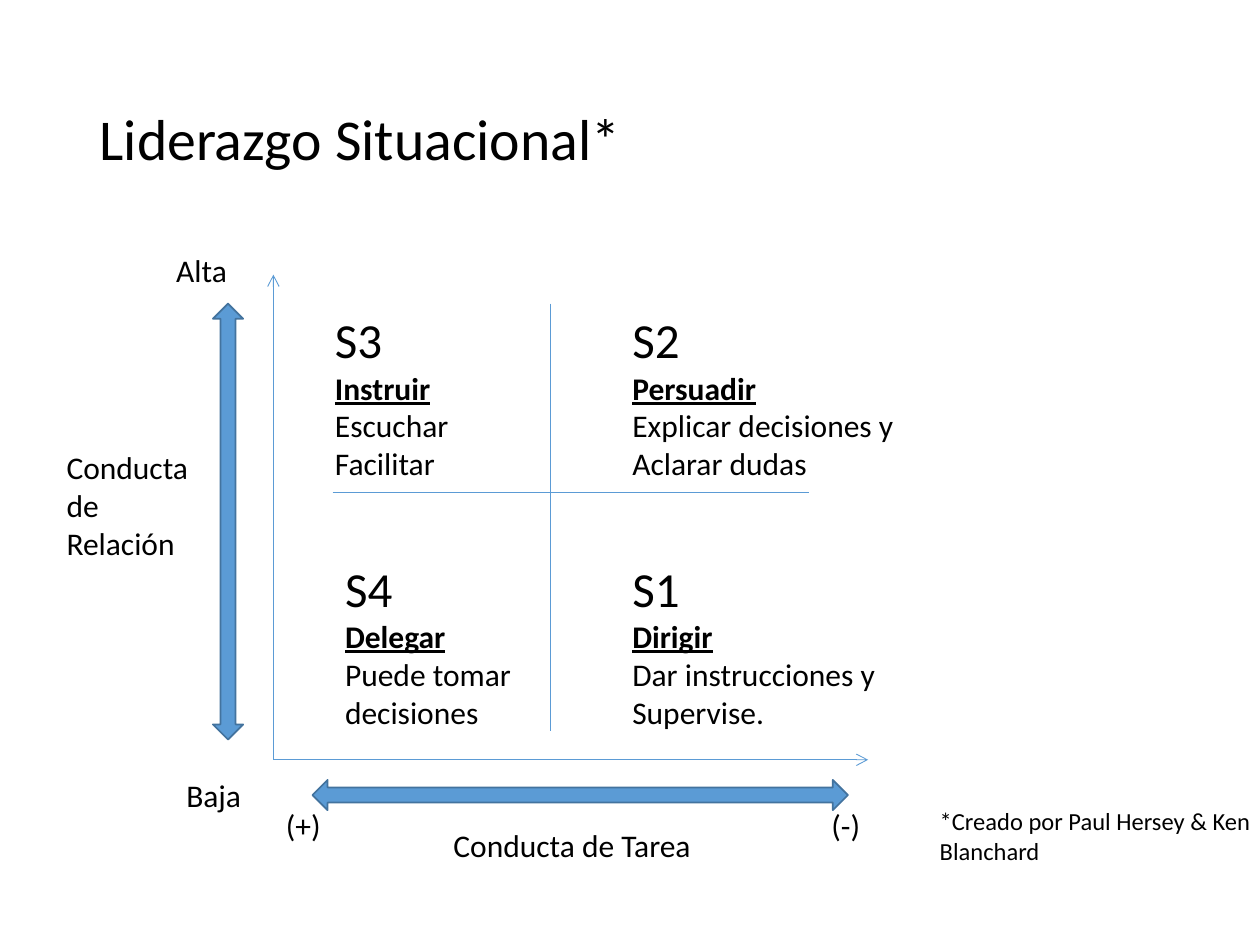
from lxml import etree
from pptx import Presentation
from pptx.dml.color import RGBColor
from pptx.enum import shapes, text
from pptx.oxml.ns import qn
from pptx.util import Inches, Pt

HUES = {"ink": "000000", "blue": "5B9BD5", "edge": "43739E"}
FONT = "Calibri"
TITLE = "Liderazgo Situacional*"

STYLES = [
    (["S3", "Instruir", "Escuchar", "Facilitar"], (2.56, 2.41, 1.65, 1.78)),
    (["S2", "Persuadir", "Explicar decisiones y", "Aclarar dudas"], (4.92, 2.41, 2.35, 1.48)),
    (["S4", "Delegar", "Puede tomar", "decisiones"], (2.64, 4.38, 1.69, 1.48)),
    (["S1", "Dirigir", "Dar instrucciones y", "Supervise."], (4.92, 4.38, 2.44, 1.48)),
]
LABELS = [
    (["Conducta de Tarea"], (3.5, 6.51, 2.52, 0.4), 18),
    (["Conducta", "de", "Relación"], (0.43, 3.51, 1.34, 1.01), 18),
    (["Alta"], (1.3, 1.94, 0.71, 0.4), 18),
    (["Baja"], (1.38, 6.11, 0.79, 0.4), 18),
    (["(-)"], (6.5, 6.35, 0.63, 0.4), 18),
    (["(+)"], (2.17, 6.35, 0.55, 0.4), 18),
    (["*Creado por Paul Hersey & Ken Blanchard"], (7.36, 6.35, 2.83, 0.88), 14),
]
LEFT, BASE = 2.17, 6.03
MID_X, MID_Y = 4.37, 3.91
LINES = [
    ((LEFT, BASE), (LEFT, 2.18), True),
    ((LEFT, BASE), (6.89, BASE), True),
    ((MID_X, 2.41), (MID_X, 5.8), False),
    ((2.64, MID_Y), (6.42, MID_Y), False),
]
ARROWS = [
    (shapes.MSO_SHAPE.UP_DOWN_ARROW, (1.69, 2.41, 0.24, 3.46)),
    (shapes.MSO_SHAPE.LEFT_RIGHT_ARROW, (2.48, 6.19, 4.25, 0.24)),
]


def hue(name):
    return RGBColor.from_string(HUES[name])


def inch(nums):
    return [Inches(n) for n in nums]


def style(para, size, bold=False):
    font = para.font
    font.name, font.size = FONT, Pt(size)
    font.bold = font.underline = bold
    font.color.rgb = hue("ink")


def add_text(slide, rows, box, sizes, wrap=True):
    frame = slide.shapes.add_textbox(*inch(box)).text_frame
    frame.word_wrap = wrap
    frame.text = "\n".join(rows)
    for i, (para, size) in enumerate(zip(frame.paragraphs, sizes)):
        style(para, size, len(sizes) == 4 and i == 1)


def add_line(slide, start, end, tip):
    line = slide.shapes.add_connector(
        shapes.MSO_CONNECTOR.STRAIGHT, *inch(start + end))
    line.line.color.rgb = hue("blue")
    line.line.width = Pt(0.5)
    props = line.element.spPr
    if tip:
        etree.SubElement(props.find(qn("a:ln")), qn("a:tailEnd"), type="arrow")
    etree.SubElement(props, qn("a:effectLst"))


def add_arrow(slide, kind, box):
    arrow = slide.shapes.add_shape(kind, *inch(box))
    arrow.shadow.inherit = False
    arrow.fill.solid()
    arrow.fill.fore_color.rgb = hue("blue")
    arrow.line.color.rgb = hue("edge")
    arrow.line.width = Pt(1)


def main():
    deck = Presentation()
    deck.slide_width, deck.slide_height = inch((10, 7.5))
    slide = deck.slides.add_slide(deck.slide_layouts[5])

    title = slide.shapes.title
    title.left, title.top, title.width, title.height = inch((0.69, 0.4, 8.62, 1.45))
    frame = title.text_frame
    frame.text = TITLE
    frame.vertical_anchor = text.MSO_ANCHOR.MIDDLE
    para = frame.paragraphs[0]
    para.alignment = text.PP_ALIGN.LEFT
    para.line_spacing = 0.9
    style(para, 33)

    for start, end, tip in LINES:
        add_line(slide, start, end, tip)
    for rows, box in STYLES:
        add_text(slide, rows, box, [28, 18, 18, 18], rows[0] != "S2")
    for kind, box in ARROWS:
        add_arrow(slide, kind, box)
    for rows, box, size in LABELS:
        add_text(slide, rows, box, [size] * len(rows))

    deck.save("out.pptx")


if __name__ == "__main__":
    main()
